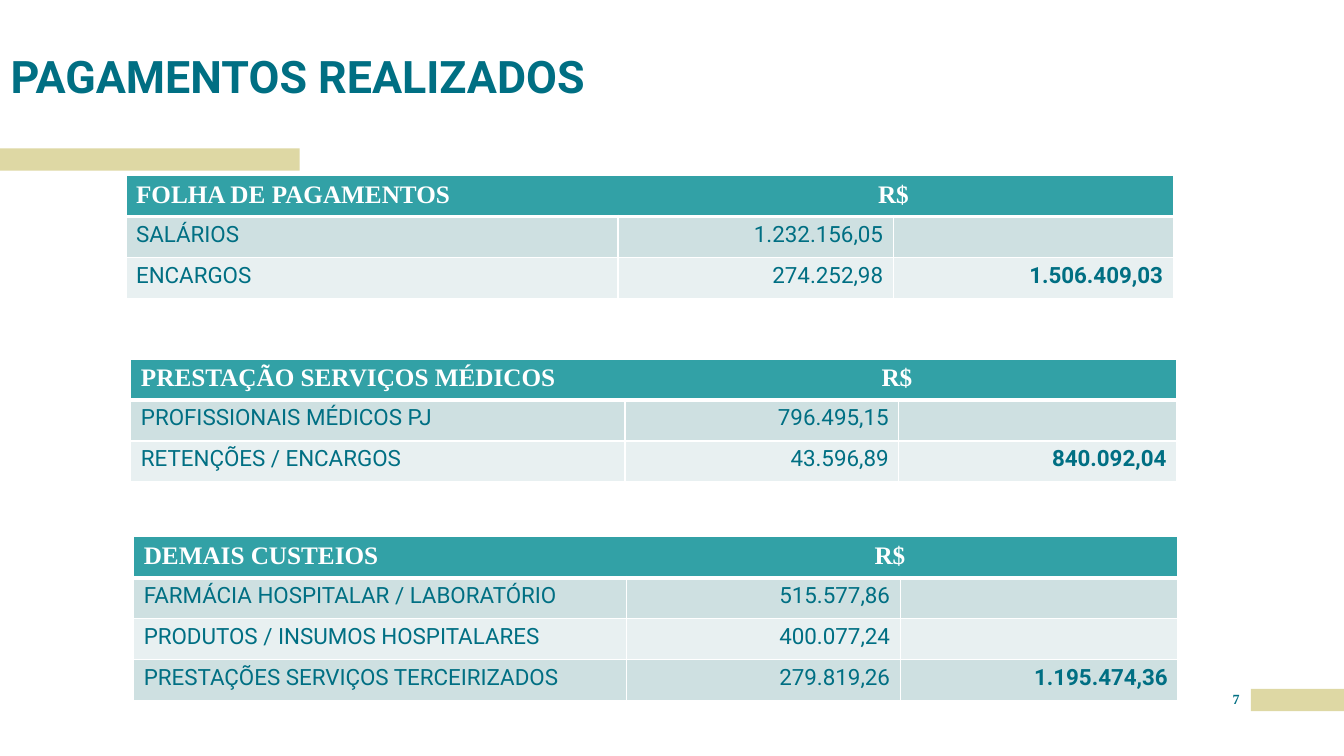
from lxml import etree
from pptx import Presentation
from pptx.dml.color import RGBColor
from pptx.enum.shapes import MSO_SHAPE
from pptx.enum.text import MSO_ANCHOR, PP_ALIGN
from pptx.oxml.ns import qn
from pptx.util import Pt

RECTANGLE = MSO_SHAPE.RECTANGLE
BOTTOM = MSO_ANCHOR.BOTTOM
LEFT, CENTER, RIGHT = PP_ALIGN.LEFT, PP_ALIGN.CENTER, PP_ALIGN.RIGHT

TEAL, HEADER, SAND, WHITE = "006F83", "32A1A6", "DED8A4", "FFFFFF"
BANDS = ["CEE0E1", "E8F0F1"]
SANS, SERIF = "Roboto", "Times New Roman"
ROW_HEIGHT = 29.25

# left, top, column widths, tab stop of "R$", heading, rows
TABLES = [
    (90, 125.5, (351.5, 196.5, 200), 530, "FOLHA DE PAGAMENTOS", [
        ("SALÁRIOS", "1.232.156,05", ""),
        ("ENCARGOS", "274.252,98", "1.506.409,03")]),
    (93.5, 256.5, (353, 195.5, 198.5), 529, "PRESTAÇÃO SERVIÇOS MÉDICOS", [
        ("PROFISSIONAIS MÉDICOS PJ", "796.495,15", ""),
        ("RETENÇÕES / ENCARGOS", "43.596,89", "840.092,04")]),
    (95.5, 383.5, (352, 195.5, 198.5), 522, "DEMAIS CUSTEIOS", [
        ("FARMÁCIA HOSPITALAR / LABORATÓRIO", "515.577,86", ""),
        ("PRODUTOS / INSUMOS HOSPITALARES", "400.077,24", ""),
        ("PRESTAÇÕES SERVIÇOS TERCEIRIZADOS", "279.819,26", "1.195.474,36")]),
]


def style_text(para, font_name, size, color, bold, align):
    para.alignment = align
    para.font.name = font_name
    para.font.size = Pt(size)
    para.font.bold = bold
    para.font.color.rgb = RGBColor.from_string(color)


def style_cell(cell, fill, bottom_width):
    """Give the cell white borders and a solid fill, in the order the schema asks for."""
    properties = cell._tc.get_or_add_tcPr()
    for side, width in (("L", 1), ("R", 1), ("T", 1), ("B", bottom_width)):
        line = etree.SubElement(properties, qn(f"a:ln{side}"), w=str(Pt(width)))
        solid = etree.SubElement(line, qn("a:solidFill"))
        etree.SubElement(solid, qn("a:srgbClr"), val=WHITE)
    cell.fill.solid()
    cell.fill.fore_color.rgb = RGBColor.from_string(fill)


deck = Presentation()
deck.slide_width, deck.slide_height = Pt(960), Pt(540)
page = deck.slides.add_slide(deck.slide_layouts[5])

for left, top, width in ((893.5, 492, 66.5), (0, 106, 214)):
    bar = page.shapes.add_shape(RECTANGLE, Pt(left), Pt(top), Pt(width), Pt(16))
    bar.shadow.inherit = False
    bar.fill.solid()
    bar.fill.fore_color.rgb = RGBColor.from_string(SAND)
    bar.line.fill.background()

title = page.shapes.title
title.left, title.top, title.width, title.height = Pt(7.5), Pt(0), Pt(672.5), Pt(73.5)
title.text_frame.text = "PAGAMENTOS REALIZADOS"
title.text_frame.vertical_anchor = BOTTOM
title_para = title.text_frame.paragraphs[0]
title_para.line_spacing = 0.9
style_text(title_para, SANS, 32, TEAL, True, LEFT)

number = page.shapes.add_textbox(Pt(872.5), Pt(493), Pt(21), Pt(18))
number.text_frame.word_wrap = True
number.text_frame.text = "7"
style_text(number.text_frame.paragraphs[0], SERIF, 10, TEAL, True, CENTER)

for box in (title, number):
    frame = box.text_frame
    frame.margin_left = frame.margin_top = frame.margin_right = frame.margin_bottom = 0

for left, top, widths, tab_stop, heading, rows in TABLES:
    row_count = len(rows) + 1
    table = page.shapes.add_table(row_count, len(widths), Pt(left), Pt(top),
                                  Pt(sum(widths)), Pt(ROW_HEIGHT * row_count)).table
    for column, width in zip(table.columns, widths):
        column.width = Pt(width)
    for row in table.rows:
        row.height = Pt(ROW_HEIGHT)

    for cell in table.rows[0].cells:
        style_cell(cell, HEADER, 3)
    heading_cell = table.cell(0, 0)
    heading_cell.merge(table.cell(0, len(widths) - 1))
    heading_cell.text = f"{heading}\tR$"
    heading_para = heading_cell.text_frame.paragraphs[0]
    tabs = etree.SubElement(heading_para._p.get_or_add_pPr(), qn("a:tabLst"))
    etree.SubElement(tabs, qn("a:tab"), pos=str(Pt(tab_stop)), algn="l")
    style_text(heading_para, SERIF, 18, WHITE, True, LEFT)

    for row_index, values in enumerate(rows, start=1):
        for column_index, value in enumerate(values):
            cell = table.cell(row_index, column_index)
            style_cell(cell, BANDS[(row_index - 1) % 2], 1)
            cell.text = value
            style_text(cell.text_frame.paragraphs[0], SANS, 16, TEAL,
                       column_index == 2, RIGHT if column_index else LEFT)

deck.save("out.pptx")
